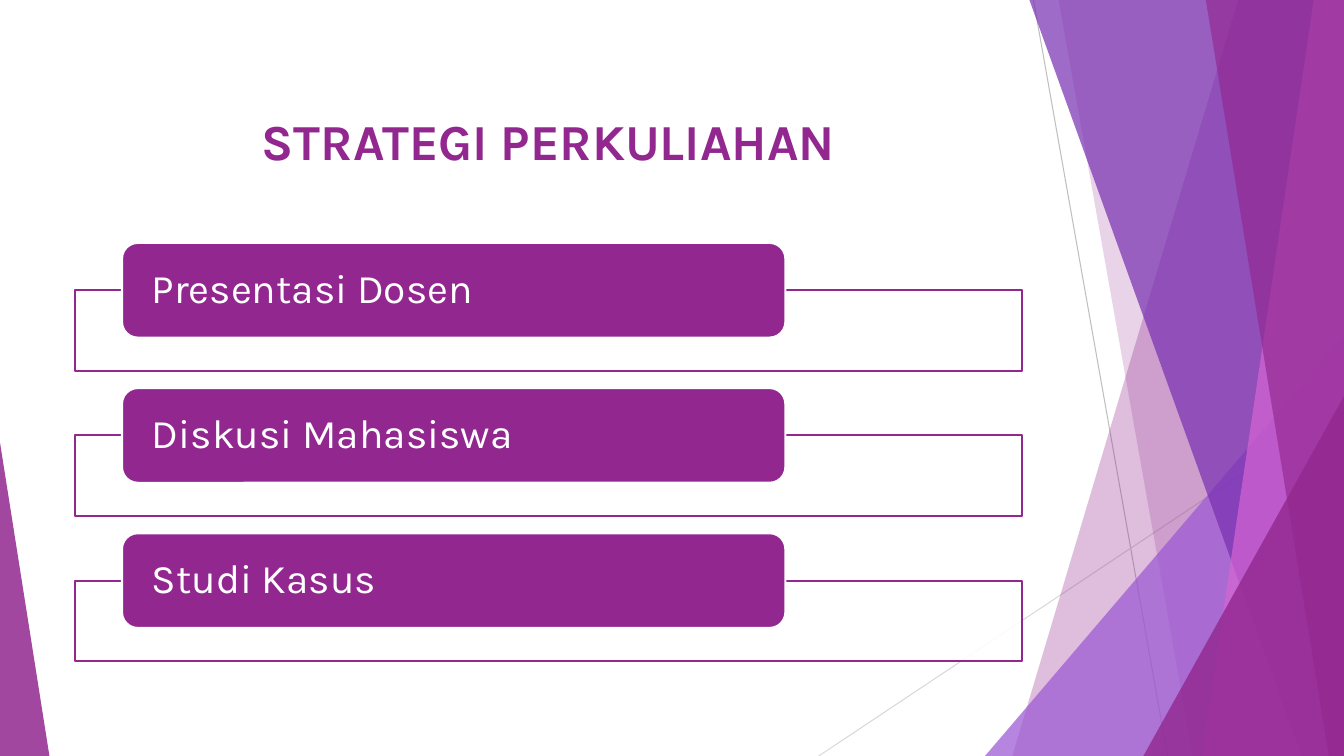
import pptx
import pptx.util
import pptx.dml.color
import pptx.enum.shapes
import pptx.enum.text
import pptx.oxml.ns
import pptx.oxml.xmlchemy

Inches = pptx.util.Inches
Pt = pptx.util.Pt
SHAPE = pptx.enum.shapes.MSO_SHAPE
ALIGN = pptx.enum.text.PP_ALIGN
ANCHOR = pptx.enum.text.MSO_ANCHOR
qn = pptx.oxml.ns.qn
make = pptx.oxml.xmlchemy.OxmlElement

WIDE, HIGH = 13.33, 7.5
FONT = "Karla"
COLORS = {
    "plum": "92278F",
    "violet": "9B57D3",
    "indigo": "762EB1",
    "pink": "D665D3",
    "white": "FFFFFF",
    "gray": "BFBFBF",
    "pale": "D9D9D9",
}
STEPS = ["Presentasi Dosen", "Diskusi Mahasiswa", "Studi Kasus"]


def rgb(name):
    return pptx.dml.color.RGBColor.from_string(COLORS[name])


def paint(shape, fill, alpha=100, line=None):
    """Set fill, opacity in percent and outline."""
    shape.shadow.inherit = False
    shape.fill.solid()
    shape.fill.fore_color.rgb = rgb(fill)
    if alpha < 100:
        tint = shape._element.spPr.find(qn("a:solidFill"))[0]
        node = make("a:alpha")
        node.set("val", str(alpha * 1000))
        tint.append(node)
    if line:
        shape.line.color.rgb = rgb(line)
        shape.line.width = Pt(1.5)
    else:
        shape.line.fill.background()


def write(para, text, size, color, bold=False):
    run = para.add_run()
    run.text = text
    run.font.name = FONT
    run.font.size = Pt(size)
    run.font.bold = bold
    run.font.color.rgb = rgb(color)


def add_line(slide, start, end, color):
    line = slide.shapes.add_connector(
        pptx.enum.shapes.MSO_CONNECTOR.STRAIGHT,
        *(Inches(v) for v in start + end))
    line.line.color.rgb = rgb(color)
    line.line.width = Pt(0.75)
    line._element.spPr.append(make("a:effectLst"))


def add_band(slide, top, foot, color, alpha):
    """Band from a slanted left edge to the right edge of the slide."""
    pen = slide.shapes.build_freeform(Inches(top), 0)
    pen.add_line_segments([(Inches(x), Inches(y)) for x, y in
                           [(WIDE, 0), (WIDE, HIGH), (foot, HIGH)]])
    paint(pen.convert_to_shape(), color, alpha)


def add_wedge(slide, left, top, width, apex, color, alpha):
    """Triangle standing on the bottom edge of the slide."""
    wedge = slide.shapes.add_shape(
        SHAPE.ISOSCELES_TRIANGLE, Inches(left), Inches(top),
        Inches(width), Inches(HIGH - top))
    wedge.adjustments[0] = apex
    paint(wedge, color, alpha)


def add_decor(slide):
    # Thin lines
    add_line(slide, (10.25, 0), (11.58, HIGH), "gray")
    add_line(slide, (WIDE, 4.03), (8.12, HIGH), "pale")
    # Overlapping facets, back to front
    add_band(slide, 12.28, 10.04, "plum", 30)
    add_band(slide, 10.5, 11.83, "plum", 20)
    add_wedge(slide, 9.77, 3.33, 3.56, 1, "violet", 72)
    add_band(slide, 10.21, 12.91, "indigo", 70)
    add_band(slide, 13.03, 11.92, "pink", 70)
    add_band(slide, 11.96, 13.18, "plum", 65)
    add_wedge(slide, 11.34, 3.93, 1.99, 1, "plum", 80)
    # Left corner
    add_wedge(slide, 0, 4.39, 0.49, 0, "plum", 85)


def add_title(slide, left, top, width, height, text):
    title = slide.shapes.title
    title.left, title.top = Inches(left), Inches(top)
    title.width, title.height = Inches(width), Inches(height)
    title.text_frame.vertical_anchor = ANCHOR.MIDDLE
    para = title.text_frame.paragraphs[0]
    para.alignment = ALIGN.CENTER
    write(para, text, 36, "plum", True)


def add_step(slide, left, top, width, text):
    # Outlined frame behind the label
    frame = slide.shapes.add_shape(
        SHAPE.RECTANGLE, Inches(left), Inches(top + 0.47),
        Inches(width), Inches(0.8))
    paint(frame, "white", 90, "plum")
    # Rounded label
    label = slide.shapes.add_shape(
        SHAPE.ROUNDED_RECTANGLE, Inches(left + 0.47), Inches(top),
        Inches(width * 0.7), Inches(0.94))
    paint(label, "plum", line="white")
    body = label.text_frame
    body.word_wrap = True
    body.vertical_anchor = ANCHOR.MIDDLE
    body.margin_left = body.margin_right = Inches(0.25)
    body.margin_top = body.margin_bottom = 0
    para = body.paragraphs[0]
    para.alignment = ALIGN.LEFT
    para.line_spacing = 0.9
    write(para, text, 29, "white")


def add_steps(slide, left, top, width, pitch):
    for i, text in enumerate(STEPS):
        add_step(slide, left, top + i * pitch, width, text)


def main():
    deck = pptx.Presentation()
    deck.slide_width, deck.slide_height = Inches(WIDE), Inches(HIGH)
    slide = deck.slides.add_slide(deck.slide_layouts[5])
    add_decor(slide)
    add_title(slide, 0.74, 0.67, 9.4, 1.44, "STRATEGI PERKULIAHAN")
    add_steps(slide, 0.74, 2.41, 9.4, 1.44)
    deck.save("out.pptx")


if __name__ == "__main__":
    main()
